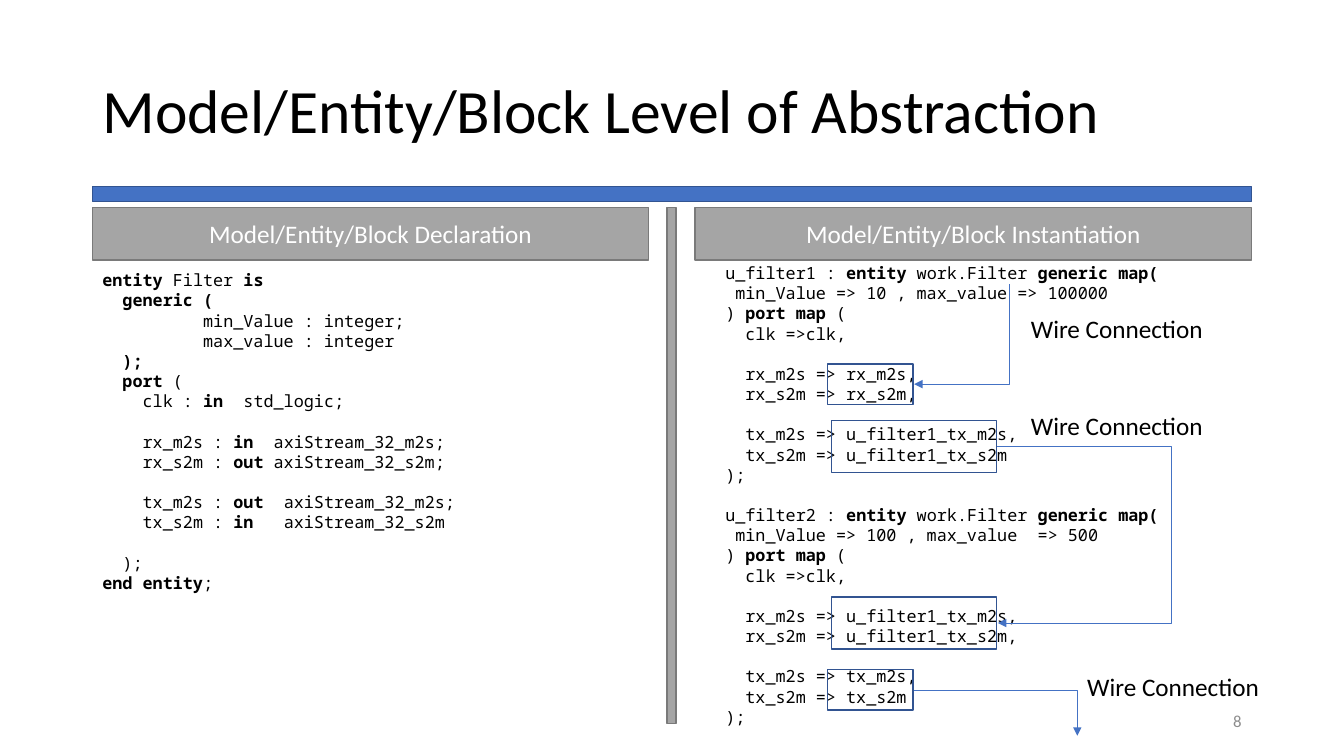
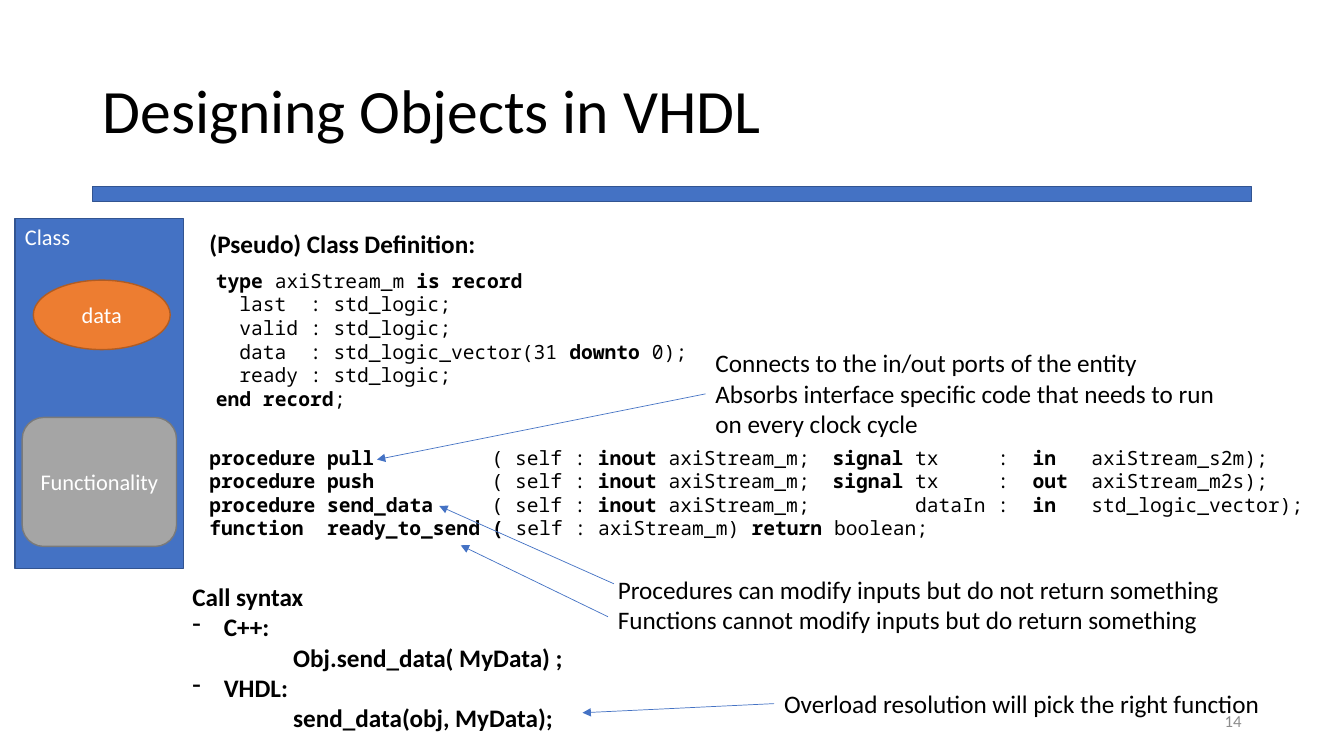
"""Build two slides on VHDL entities and on objects in VHDL."""
from lxml import etree
from pptx import Presentation
from pptx.dml.color import RGBColor
from pptx.enum.shapes import MSO_CONNECTOR, MSO_SHAPE
from pptx.enum.text import MSO_ANCHOR, PP_ALIGN
from pptx.oxml.ns import qn
from pptx.util import Cm, Pt

RECT, OVAL, ROUNDED = MSO_SHAPE.RECTANGLE, MSO_SHAPE.OVAL, MSO_SHAPE.ROUNDED_RECTANGLE
STRAIGHT, ELBOW = MSO_CONNECTOR.STRAIGHT, MSO_CONNECTOR.ELBOW
LEFT, CENTER, RIGHT = PP_ALIGN.LEFT, PP_ALIGN.CENTER, PP_ALIGN.RIGHT
TOP, MIDDLE = MSO_ANCHOR.TOP, MSO_ANCHOR.MIDDLE

BLACK, WHITE, MUTED = "000000", "FFFFFF", "8C8C8C"
BLUE, NAVY = "4472C4", "325491"
GREY, DARK_GREY = "A5A5A5", "7A7A7A"
ORANGE, BROWN = "ED7D31", "AF5C24"
BODY, MONO = "Calibri", "Noto Sans Mono"
paint = RGBColor.from_string


def write(shape, text, size=18, colour=BLACK, font=BODY, align=LEFT, anchor=TOP):
    """Fill a shape with lines, where *stars* mark bold and wide gaps become tab stops."""
    frame = shape.text_frame
    frame.word_wrap, frame.vertical_anchor = True, anchor
    paragraph, gap = frame.paragraphs[0], 0
    for number, line in enumerate(text.split("\n")):
        if not line:
            gap = size * 1.2
            continue
        if number:
            paragraph = frame.add_paragraph()
        paragraph.alignment = align
        if gap:
            paragraph.space_before, gap = Pt(gap), 0
        plain = line.replace("*", "")
        stops = [i for i, mark in enumerate(plain) if mark != " " and plain[:i].endswith("  ")]
        if stops:
            tabs = etree.SubElement(paragraph._p.get_or_add_pPr(), qn("a:tabLst"))
            for stop in stops:
                etree.SubElement(tabs, qn("a:tab"), pos=str(Pt(stop * size * 0.6)), algn="l")
        tabbed = "\t".join(part.strip() for part in line.split("  ") if part)
        if line.startswith("  "):
            tabbed = "\t" + tabbed
        for order, piece in enumerate(tabbed.split("*")):
            if piece:
                run = paragraph.add_run()
                run.text = piece
                run.font.color.rgb = paint(colour)
                style = {"name": font, "size": Pt(size), "bold": order % 2 == 1}
                for key, value in style.items():
                    setattr(run.font, key, value)


def add_box(slide, at, kind=None, fill=None, edge=None, text="", **style):
    """Add a text box, or a preset shape when a kind is given."""
    place = [Cm(length) for length in at]
    if kind is None:
        box = slide.shapes.add_textbox(*place)
    else:
        box = slide.shapes.add_shape(kind, *place)
        box.shadow.inherit = False
        box.line.color.rgb, box.line.width = paint(edge), Pt(1)
        if fill:
            box.fill.solid()
            box.fill.fore_color.rgb = paint(fill)
        else:
            box.fill.background()
    if text:
        write(box, text, **style)
    return box


prs = Presentation()
prs.slide_width, prs.slide_height = Cm(33.87), Cm(19.05)
layout = prs.slide_layouts[5]
pages = []
for heading, page_number in [("Model/Entity/Block Level of Abstraction", "8"),
                             ("Designing Objects in VHDL", "14")]:
    page = prs.slides.add_slide(layout)
    title = page.shapes.title
    place = {"left": 2.33, "top": 1.01, "width": 29.21, "height": 3.68}
    for key, value in place.items():
        setattr(title, key, Cm(value))
    write(title, heading, size=44, anchor=MIDDLE)
    title.text_frame.paragraphs[0].line_spacing = 0.9
    add_box(page, (23.92, 17.66, 7.62, 1.01), text=page_number, size=12, colour=MUTED,
            align=RIGHT, anchor=MIDDLE)
    pages.append(page)
abstraction, objects = pages

title_bar = add_box(abstraction, (2.33, 4.7, 29.21, 0.38), RECT, BLUE, NAVY)
layout.shapes.element.append(title_bar.element)

declaration = """*entity* Filter *is*
  *generic (*
          min_Value : integer;
          max_value : integer
  *);*
  *port* (
    clk : *in*  std_logic;

    rx_m2s : *in*  axiStream_32_m2s;
    rx_s2m : *out* axiStream_32_s2m;

    tx_m2s : *out*  axiStream_32_m2s;
    tx_s2m : *in*   axiStream_32_s2m

  );
*end entity*;"""
instantiation = """  u_filter1 : *entity* work.Filter *generic map(*
   min_Value => 10 , max_value => 100000
  ) *port map* (
    clk =>clk,

    rx_m2s => rx_m2s,
    rx_s2m => rx_s2m,

    tx_m2s => u_filter1_tx_m2s,
    tx_s2m => u_filter1_tx_s2m
  );

  u_filter2 : *entity* work.Filter *generic map(*
   min_Value => 100 , max_value  => 500
  ) *port map* (
    clk =>clk,

    rx_m2s => u_filter1_tx_m2s,
    rx_s2m => u_filter1_tx_s2m,

    tx_m2s => tx_m2s,
    tx_s2m => tx_s2m
  );"""
add_box(abstraction, (2.33, 6.68, 14.02, 8.97), text=declaration, size=12, font=MONO)
add_box(abstraction, (17.52, 6.5, 14.9, 12.07), text=instantiation, size=12, font=MONO)
for left, part in [(2.33, "Declaration"), (17.52, "Instantiation")]:
    add_box(abstraction, (left, 5.23, 14.02, 1.32), RECT, GREY, DARK_GREY,
            text="Model/Entity/Block " + part, colour=WHITE, align=CENTER, anchor=MIDDLE)
add_box(abstraction, (16.81, 5.23, 0.23, 13), RECT, GREY, DARK_GREY)

for top in (10.59, 15.04):
    add_box(abstraction, (20.96, top, 4.16, 1.32), RECT, edge=NAVY)
for top in (9.17, 16.87):
    add_box(abstraction, (20.85, top, 2.16, 1.02), RECT, edge=NAVY)
for left, top in [(25.73, 7.77), (25.73, 10.21), (27.15, 16.79)]:
    add_box(abstraction, (left, top, 6.1, 1.02), text="Wire Connection")

arrows = []
for x1, y1, x2, y2, bend_x in [(25.43, 7.16, 23.04, 9.68, 25.43),
                               (25.12, 11.25, 25.15, 15.7, 29.51),
                               (23.04, 17.4, 27.15, 18.54, 27.15)]:
    wire = abstraction.shapes.add_connector(ELBOW, Cm(x1), Cm(y1), Cm(x2), Cm(y2))
    bend = round((bend_x - x1) / (x2 - x1) * 100000)
    adjustments = wire.element.spPr.find(qn("a:prstGeom")).get_or_add_avLst()
    etree.SubElement(adjustments, qn("a:gd"), name="adj1", fmla=f"val {bend}")
    arrows.append(wire)

record = """  *type* axiStream_m *is record*
    last  : std_logic;
    valid : std_logic;
    data  : std_logic_vector(31 *downto* 0);
    ready : std_logic;
  *end record*;"""
procedures = """*procedure pull*          ( self : *inout* axiStream_m;  *signal* tx     :  *in*   axiStream_s2m);
*procedure push*          ( self : *inout* axiStream_m;  *signal* tx     :  *out*  axiStream_m2s);
*procedure send_data*     ( self : *inout* axiStream_m;         dataIn :  *in*   std_logic_vector);
*function  ready_to_send (* self : axiStream_m) *return* boolean;"""
call_syntax = """*Call syntax*
*C++:*
*Obj.send_data( MyData) ;*
*VHDL:*
*send_data(obj, MyData);*"""
add_box(objects, (4.6, 6.65, 14.12, 3.84), text=record, size=14, font=MONO)
add_box(objects, (5.03, 5.64, 13.31, 1.02), text="*(Pseudo) Class Definition:*")
add_box(objects, (5.03, 11.1, 28.3, 2.64), text=procedures, size=14, font=MONO)

calls = add_box(objects, (4.6, 14.53, 14.88, 4.11), text=call_syntax)
for order, call in enumerate(calls.text_frame.paragraphs[1:]):
    properties = call._p.get_or_add_pPr()
    if order % 2:
        properties.set("marL", str(Cm(2.54)))
    else:
        properties.set("marL", str(Cm(0.79)))
        properties.set("indent", str(Cm(-0.79)))
        etree.SubElement(properties, qn("a:buChar"), char="-")

overload = add_box(objects, (19.51, 17.22, 12.78, 1.02),
                   text="Overload resolution will pick the right function")
ports = add_box(objects, (17.78, 8.64, 13.23, 2.57),
                text="Connects to the in/out ports of the entity\n"
                     "Absorbs interface specific code that needs to run on every clock cycle")
add_box(objects, (15.32, 14.35, 16.23, 1.8),
        text="Procedures can modify inputs but do not return something\n"
             "Functions cannot modify inputs but do return something")

for x1, y1, x2, y2, note in [(19.51, 17.73, 14.68, 17.96, overload),
                             (17.78, 9.93, 9.5, 11.58, ports),
                             (15.47, 14.71, 11.07, 12.75, None),
                             (15.32, 15.54, 11.61, 13.74, None)]:
    pointer = objects.shapes.add_connector(STRAIGHT, Cm(x1), Cm(y1), Cm(x2), Cm(y2))
    if note:
        pointer.begin_connect(note, 1)
    arrows.append(pointer)

add_box(objects, (0.38, 5.51, 4.24, 8.81), RECT, BLUE, NAVY,
        text="Class", size=16, colour=WHITE)
for at, kind, fill, edge, member in [
        ((0.84, 7.06, 3.45, 1.75), OVAL, ORANGE, BROWN, "data"),
        ((0.56, 10.52, 3.89, 3.25), ROUNDED, GREY, DARK_GREY, "Functionality")]:
    add_box(objects, at, kind, fill, edge, text=member, size=16, colour=WHITE,
            align=CENTER, anchor=MIDDLE)

for arrow in arrows:
    arrow.line.color.rgb, arrow.line.width = paint(BLUE), Pt(0.5)
    etree.SubElement(arrow.line._get_or_add_ln(), qn("a:tailEnd"), type="triangle")
    etree.SubElement(arrow.element.spPr, qn("a:effectLst"))

prs.save("out.pptx")
